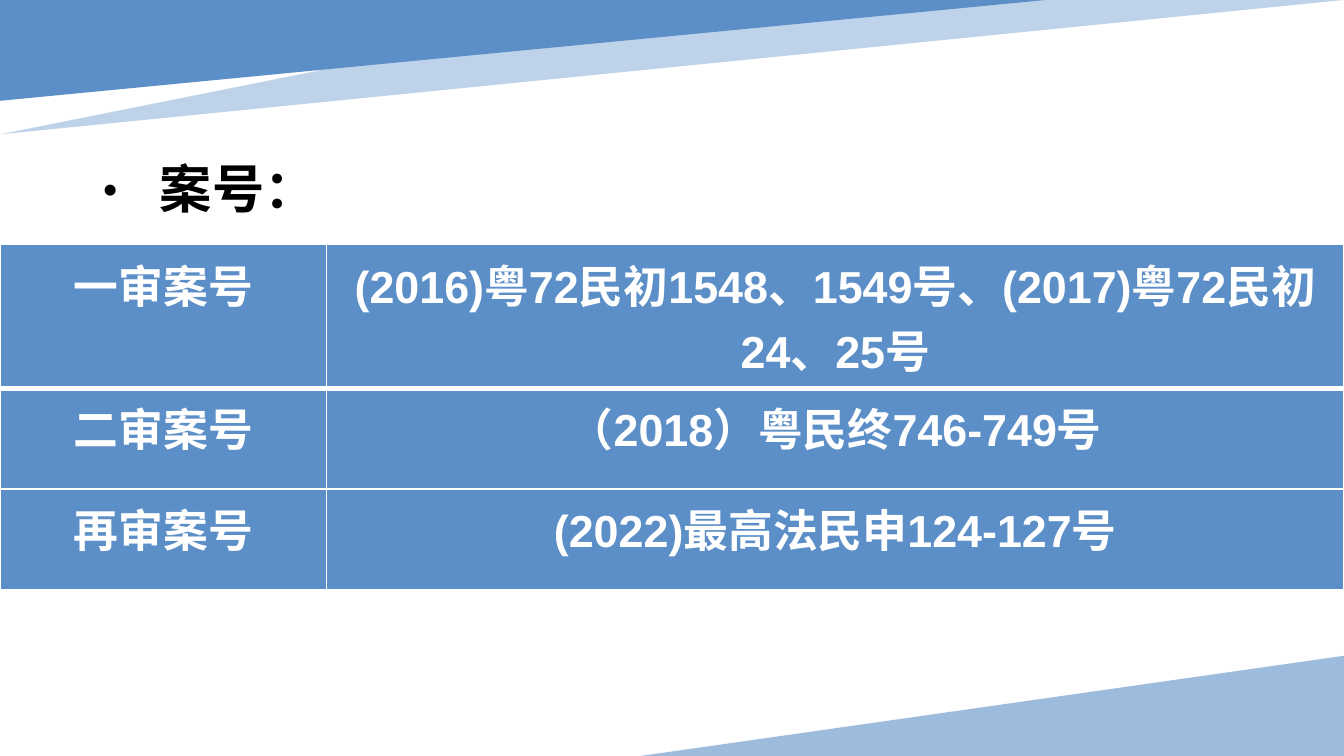
from lxml.etree import SubElement
from pptx import Presentation
from pptx.dml.color import RGBColor
from pptx.enum.shapes import MSO_SHAPE
from pptx.enum.text import MSO_ANCHOR, PP_ALIGN
from pptx.oxml import parse_xml
from pptx.oxml.ns import nsdecls, qn
from pptx.util import Inches, Pt

BLUE, MID, PALE, WHITE = "5C8FC7", "9DBCDD", "BED2E9", "FFFFFF"
CJK = "Noto Sans CJK SC"
W, H = 10, 10 * 9 / 16


def paint(fill, color):
    fill.solid()
    fill.fore_color.rgb = RGBColor.from_string(color)


def add_run(p, text, font, size, color):
    r = p.add_run()
    r.text = text
    r.font.name, r.font.size, r.font.bold = font, Pt(size), True
    paint(r.font.fill, color)
    SubElement(r.font._element, qn("a:ea"), typeface=CJK)


prs = Presentation()
prs.slide_width, prs.slide_height = Inches(W), Inches(H)
s = prs.slides.add_slide(prs.slide_layouts[1])
title, body = s.placeholders
title._element.getparent().remove(title._element)

# Corner bands: a pale strip with a right-angled triangle over it
bands = [
    ([(W, 4.6), (W, 5.55), (6.73, H), (3.28, H)], (4.77, 4.88, W - 4.77, H - 4.88), 0, MID),
    ([(0, 1.02), (0, 0.75), (5.13, 0), (W, 0)], (0, 0, 7.78, 0.75), 180, BLUE),
]
for points, box, rotation, color in bands:
    fb = s.shapes.build_freeform(*points[0], scale=Inches(1))
    fb.add_line_segments(points[1:], close=True)
    strip = fb.convert_to_shape()
    corner = s.shapes.add_shape(MSO_SHAPE.ISOSCELES_TRIANGLE, *map(Inches, box))
    corner.adjustments[0] = 1
    corner.rotation = rotation
    for sp, c in ((strip, PALE), (corner, color)):
        paint(sp.fill, c)
        sp.line.fill.background()
        sp.shadow.inherit = False

# Bulleted heading
body.left, body.top, body.width, body.height = map(Inches, (0.53, 1.11, 5.56, 0.57))
tf = body.text_frame
tf.margin_top = tf.margin_bottom = 0
tf.vertical_anchor = MSO_ANCHOR.MIDDLE
p = tf.paragraphs[0]
p.space_before = Pt(0)
add_run(p, "案号：", CJK, 28, "000000")
pPr = p._p.get_or_add_pPr()
pPr.set("marL", str(Inches(0.56)))
pPr.set("indent", str(-Inches(0.56)))
SubElement(pPr, qn("a:buFont"), typeface=CJK)
SubElement(pPr, qn("a:buChar"), char="•")

# Table of case numbers
rows = [
    ("一审案号", "(2016)粤72民初1548、1549号、(2017)粤72民初24、25号"),
    ("二审案号", "（2018）粤民终746-749号"),
    ("再审案号", "(2022)最高法民申124-127号"),
]
heights = [1.07, 0.75, 0.75]
table = s.shapes.add_table(3, 2, 0, Inches(1.82), Inches(W), Inches(sum(heights))).table
for column, width in zip(table.columns, (2.43, 7.57)):
    column.width = Inches(width)
for i, texts in enumerate(rows):
    table.rows[i].height = Inches(heights[i])
    for j, text in enumerate(texts):
        cell = table.cell(i, j)
        p = cell.text_frame.paragraphs[0]
        p.alignment, p.line_spacing = PP_ALIGN.CENTER, Pt(34.8)
        add_run(p, text, "Arial", 24, WHITE)
        paint(cell.fill, BLUE)
        # A thick rule separates the first row from the rest
        weights = {"L": 1, "R": 1, "T": 3 if i == 1 else 1, "B": 3 if i == 0 else 1}
        for k, (side, weight) in enumerate(weights.items()):
            cell._tc.get_or_add_tcPr().insert(k, parse_xml(
                f'<a:ln{side} {nsdecls("a")} w="{Pt(weight)}"><a:solidFill>'
                f'<a:srgbClr val="{WHITE}"/></a:solidFill></a:ln{side}>'))

prs.save("out.pptx")
